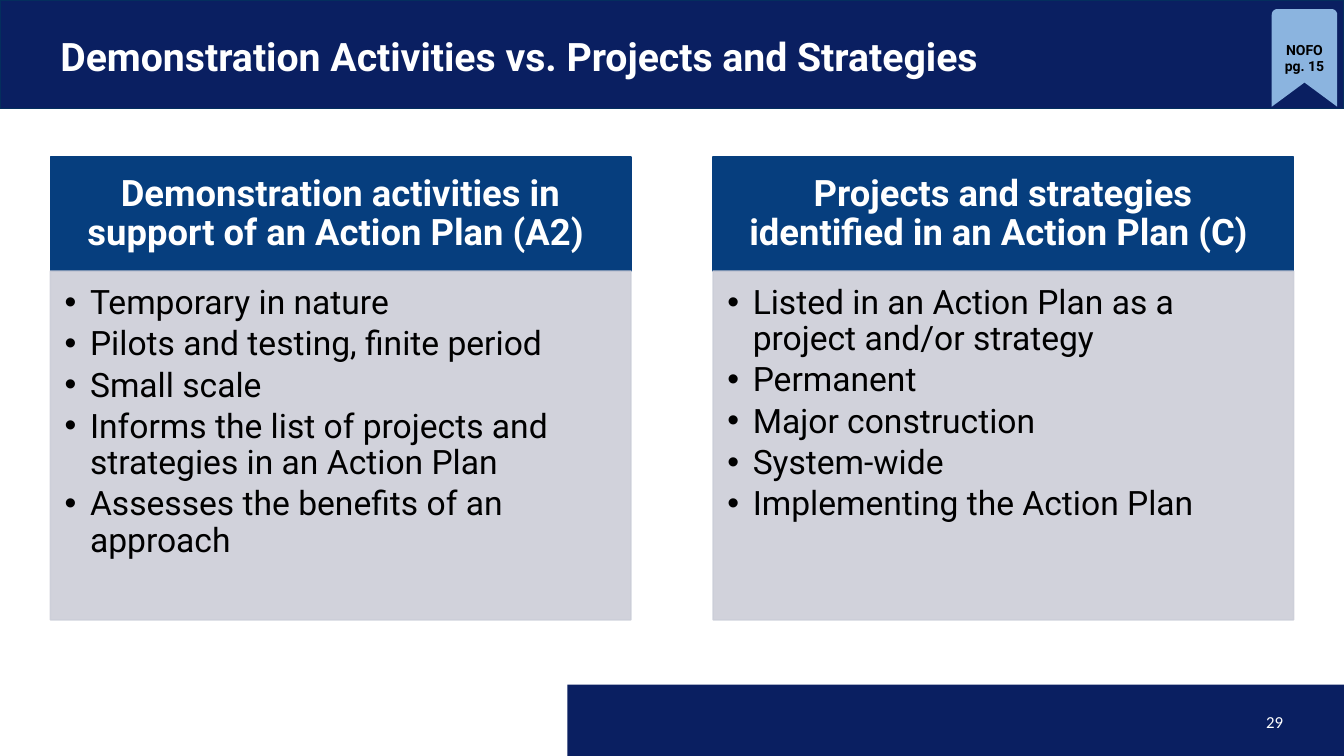
"""Build the slide comparing demonstration activities with projects and strategies."""
import math
from dataclasses import dataclass

import pptx
import pptx.dml.color
import pptx.enum.shapes
import pptx.enum.text
import pptx.oxml
import pptx.oxml.ns
import pptx.util
from pptx.shapes.autoshape import Shape
from pptx.slide import Slide
from pptx.text.text import TextFrame

Cm = pptx.util.Cm
Pt = pptx.util.Pt
ALIGN = pptx.enum.text.PP_ALIGN
ANCHOR = pptx.enum.text.MSO_ANCHOR

COLOURS = {
    "navy": "0A1F61",
    "band_line": "042E5D",
    "header": "063E7E",
    "panel": "CCCED8",
    "ribbon": "8BB4DF",
    "light": "FFFFFF",
    "dark": "000000",
}
SLIDE_WIDTH, SLIDE_HEIGHT = 33.87, 19.05
MARGIN = 1.27
BAND_HEIGHT = 2.74
PANEL_WIDTH = 14.63
HEADER_TOP, HEADER_HEIGHT = 3.96, 2.87
LIST_HEIGHT = 8.79
DEFAULT_INSETS = (0.25, 0.13, 0.25, 0.13)


@dataclass(frozen=True)
class Box:
    left: float
    top: float
    width: float
    height: float


@dataclass(frozen=True)
class TextStyle:
    size: float
    colour: str
    bold: bool = False
    font: str = "Roboto"
    align: ALIGN = ALIGN.LEFT
    anchor: ANCHOR = ANCHOR.MIDDLE
    line_spacing: float = 1.0
    space_after: float = 0
    bullet: str = ""
    insets: tuple[float, float, float, float] = DEFAULT_INSETS


@dataclass(frozen=True)
class Panel:
    header_index: int
    list_index: int
    left: float
    heading: str
    items: tuple[str, ...]


TITLE_STYLE = TextStyle(28, "light", bold=True, line_spacing=1.08)
HEADER_STYLE = TextStyle(26, "light", bold=True, align=ALIGN.CENTER, line_spacing=0.9,
                         insets=(0.51, 0.3, 0.51, 0.3))
LIST_STYLE = TextStyle(24, "dark", anchor=ANCHOR.TOP, line_spacing=0.9, space_after=3.6,
                       bullet="•", insets=(0.36, 0.36, 0.48, 0.53))
RIBBON_STYLE = TextStyle(10, "dark", bold=True, align=ALIGN.CENTER)
NUMBER_STYLE = TextStyle(12, "light", font="Calibri", align=ALIGN.RIGHT)

PANELS = (
    Panel(1, 2, MARGIN, "Demonstration activities in support of an Action Plan (A2) ", (
        "Temporary in nature",
        "Pilots and testing, finite period",
        "Small scale",
        "Informs the list of projects and strategies in an Action Plan",
        "Assesses the benefits of an approach",
    )),
    Panel(3, 4, SLIDE_WIDTH - MARGIN - PANEL_WIDTH,
          "Projects and strategies identified in an Action Plan (C) ", (
              "Listed in an Action Plan as a project and/or strategy",
              "Permanent",
              "Major construction",
              "System-wide",
              "Implementing the Action Plan",
          )),
)


def rgb(name: str) -> pptx.dml.color.RGBColor:
    """Return the named colour."""
    return pptx.dml.color.RGBColor.from_string(COLOURS[name])


def lengths(box: Box) -> tuple[Cm, Cm, Cm, Cm]:
    """Return the box as slide lengths."""
    return Cm(box.left), Cm(box.top), Cm(box.width), Cm(box.height)


def place(shape: Shape, box: Box) -> None:
    """Move and size a shape."""
    shape.left, shape.top, shape.width, shape.height = lengths(box)


def paint(shape: Shape, fill: str, line: str = "", opacity: int = 100) -> None:
    """Fill and outline a shape."""
    shape.fill.solid()
    shape.fill.fore_color.rgb = rgb(fill)
    if line:
        shape.line.color.rgb = rgb(line)
        shape.line.width = Pt(1)
    else:
        shape.line.fill.background()
    if opacity < 100:
        for colour in shape.element.spPr.iter(pptx.oxml.ns.qn("a:srgbClr")):
            alpha = pptx.oxml.parse_xml(f'<a:alpha {pptx.oxml.ns.nsdecls("a")} val="{opacity * 1000}"/>')
            colour.append(alpha)


def write(frame: TextFrame, lines: tuple[str, ...], style: TextStyle) -> None:
    """Write one styled paragraph for each line."""
    frame.text = "\n".join(lines)
    frame.word_wrap = True
    frame.auto_size = pptx.enum.text.MSO_AUTO_SIZE.NONE
    frame.vertical_anchor = style.anchor
    frame.margin_left, frame.margin_top, frame.margin_right, frame.margin_bottom = map(Cm, style.insets)
    for paragraph in frame.paragraphs:
        paragraph.alignment = style.align
        paragraph.line_spacing = style.line_spacing
        paragraph.space_before = Pt(0)
        paragraph.space_after = Pt(style.space_after)
        if style.bullet:
            properties = paragraph._p.get_or_add_pPr()
            properties.set("marL", str(Cm(0.64)))
            properties.set("indent", str(-Cm(0.64)))
            properties.append(pptx.oxml.parse_xml(
                f'<a:buChar {pptx.oxml.ns.nsdecls("a")} char="{style.bullet}"/>'))
        paragraph.font.name = style.font
        paragraph.font.size = Pt(style.size)
        paragraph.font.bold = style.bold
        paragraph.font.color.rgb = rgb(style.colour)


def add_band(slide: Slide, box: Box, line: str = "") -> None:
    """Add a navy band behind the title."""
    band = slide.shapes.add_shape(pptx.enum.shapes.MSO_SHAPE.RECTANGLE, *lengths(box))
    band.shadow.inherit = False
    paint(band, "navy", line)
    slide.shapes.title.element.addprevious(band.element)


def add_panel(slide: Slide, panel: Panel) -> None:
    """Fill one heading and the list below it."""
    placeholders = {shape.placeholder_format.idx: shape for shape in slide.placeholders}
    header, bullets = placeholders[panel.header_index], placeholders[panel.list_index]
    place(header, Box(panel.left, HEADER_TOP, PANEL_WIDTH, HEADER_HEIGHT))
    paint(header, "header", "header")
    write(header.text_frame, (panel.heading,), HEADER_STYLE)
    place(bullets, Box(panel.left, HEADER_TOP + HEADER_HEIGHT, PANEL_WIDTH, LIST_HEIGHT))
    paint(bullets, "panel", "panel", opacity=90)
    write(bullets.text_frame, panel.items, LIST_STYLE)


def add_ribbon(slide: Slide, box: Box, radius: float, notch: float) -> None:
    """Add the bookmark with rounded top corners and a notched foot."""
    right, bottom = box.left + box.width, box.top + box.height
    points = [(right, bottom)]
    for centre, start in ((right - radius, 0), (box.left + radius, 90)):
        for step in range(7):
            angle = math.radians(start + 15 * step)
            points.append((centre + radius * math.cos(angle),
                           box.top + radius - radius * math.sin(angle)))
    points += [(box.left, bottom), (box.left + box.width / 2, bottom - notch)]
    outline = [(Cm(x), Cm(y)) for x, y in points]
    builder = slide.shapes.build_freeform(*outline[0])
    builder.add_line_segments(outline[1:], close=True)
    ribbon = builder.convert_to_shape()
    ribbon.shadow.inherit = False
    paint(ribbon, "ribbon")
    write(ribbon.text_frame, ("NOFO pg. 15",), RIBBON_STYLE)


def main() -> None:
    """Build and save the slide."""
    presentation = pptx.Presentation()
    presentation.slide_width, presentation.slide_height = Cm(SLIDE_WIDTH), Cm(SLIDE_HEIGHT)
    slide = presentation.slides.add_slide(presentation.slide_layouts.get_by_name("Comparison"))
    add_band(slide, Box(0, 0, SLIDE_WIDTH, BAND_HEIGHT), "band_line")
    add_band(slide, Box(14.3, 17.25, SLIDE_WIDTH - 14.3, SLIDE_HEIGHT - 17.25))
    title = slide.shapes.title
    place(title, Box(MARGIN, 0, SLIDE_WIDTH - 2 * MARGIN, BAND_HEIGHT))
    write(title.text_frame, ("Demonstration Activities vs. Projects and Strategies",), TITLE_STYLE)
    for panel in PANELS:
        add_panel(slide, panel)
    add_ribbon(slide, Box(32.05, 0.23, 1.65, 2.46), radius=0.14, notch=0.61)
    number = slide.shapes.add_textbox(*lengths(Box(24.97, 17.88, 7.62, 0.64)))
    write(number.text_frame, ("29",), NUMBER_STYLE)
    presentation.save("out.pptx")


if __name__ == "__main__":
    main()
